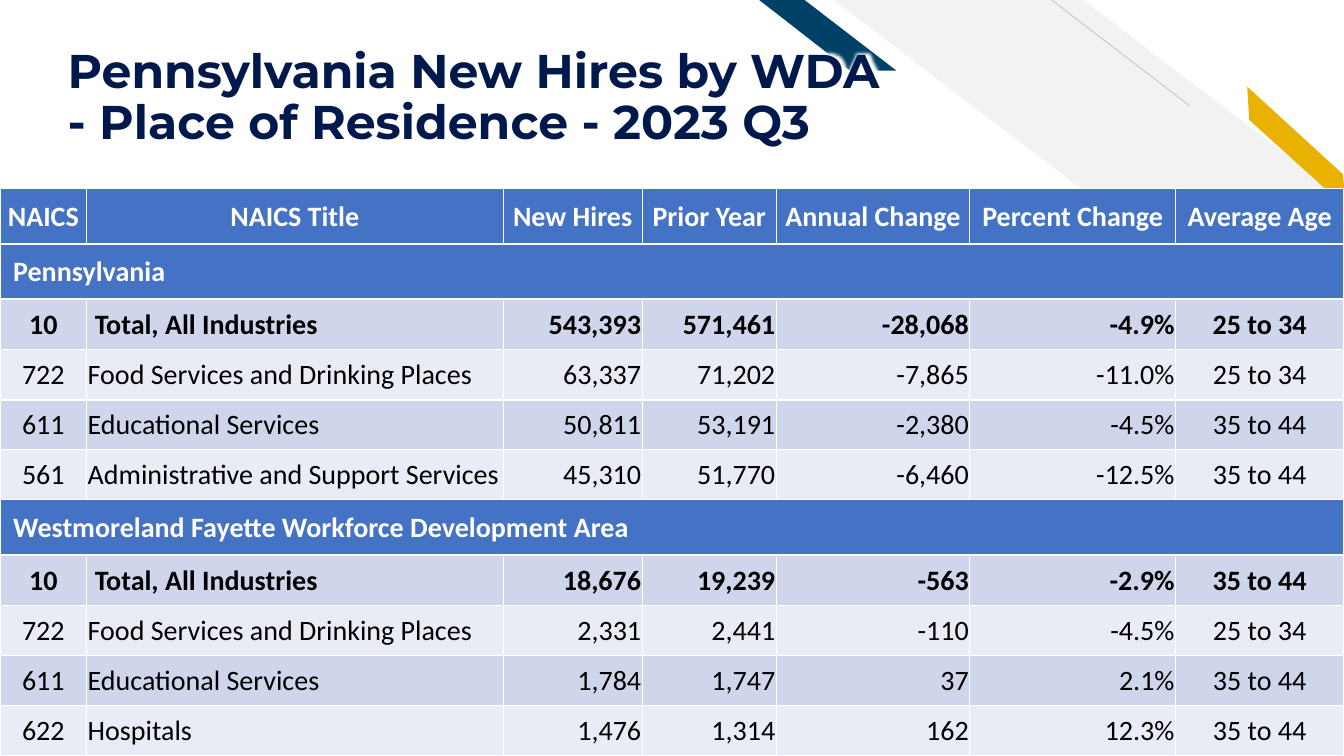
import pptx
import pptx.dml.color
import pptx.enum.shapes
import pptx.enum.text
import pptx.oxml
import pptx.oxml.ns
import pptx.util
from lxml import etree

Inches = pptx.util.Inches
Pt = pptx.util.Pt
ALIGN = pptx.enum.text.PP_ALIGN
ANCHOR = pptx.enum.text.MSO_ANCHOR
qn = pptx.oxml.ns.qn

COLORS = {
    "navy": "00194C", "teal": "014067", "gold": "EAB200", "stripe": "F2F2F2",
    "hairline": "BFBFBF", "header": "4472C4", "band_dark": "CFD5EA",
    "band_light": "E9EBF5", "white": "FFFFFF", "black": "000000",
}


def rgb(name):
    return pptx.dml.color.RGBColor.from_string(COLORS[name])


def write_text(text_frame, text, font="Calibri", size=20, color="black",
               bold=False, align=ALIGN.LEFT, line_spacing=None):
    paragraph = text_frame.paragraphs[0]
    paragraph.text = text
    paragraph.alignment = align
    paragraph.line_spacing = line_spacing
    for run in paragraph.runs:
        run.font.name = font
        run.font.size = Pt(size)
        run.font.bold = bold
        run.font.color.rgb = rgb(color)


presentation = pptx.Presentation()
presentation.slide_width = Inches(13.33)
presentation.slide_height = Inches(7.5)
slide = presentation.slides.add_slide(presentation.slide_layouts[5])
shapes = slide.shapes

# Corner decoration: wide grey stripe
stripe = shapes.add_shape(pptx.enum.shapes.MSO_SHAPE.DIAGONAL_STRIPE,
                          Inches(8.27), Inches(0), Inches(5.07), Inches(3.87))
stripe.adjustments[0] = 0.512
stripe.element.spPr.get_or_add_xfrm().set("flipH", "1")
stripe.shadow.inherit = False
stripe.fill.solid()
stripe.fill.fore_color.rgb = rgb("stripe")
stripe.line.fill.background()

# Corner decoration: hairline
hairline = shapes.add_connector(pptx.enum.shapes.MSO_CONNECTOR.STRAIGHT,
                                Inches(11.8), Inches(1.05), Inches(10.43), Inches(0))
hairline.line.color.rgb = rgb("hairline")
hairline.line.width = Pt(0.5)
etree.SubElement(hairline.element.spPr, qn("a:effectLst"))

# Corner decoration: gold and teal bars
bars = [
    ("gold", [(13.35, 2.06), (13.32, 1.73), (12.37, 0.86), (12.39, 1.19)]),
    ("teal", [(8.89, 0.7), (7.98, 0), (7.53, 0), (8.43, 0.7)]),
]
for color, corners in bars:
    points = [(Inches(x), Inches(y)) for x, y in corners]
    builder = shapes.build_freeform(*points[0])
    builder.add_line_segments(points[1:], close=True)
    bar = builder.convert_to_shape()
    bar.shadow.inherit = False
    bar.fill.solid()
    bar.fill.fore_color.rgb = rgb(color)
    bar.line.fill.background()

# Title, in front of the decoration, with a white glow
title = shapes.title
title.left, title.top = Inches(0.57), Inches(0.23)
title.width, title.height = Inches(11.26), Inches(1.26)
title_frame = title.text_frame
title_frame.auto_size = pptx.enum.text.MSO_AUTO_SIZE.NONE
title_frame.word_wrap = True
title_frame.vertical_anchor = ANCHOR.BOTTOM
title_frame.margin_left = title_frame.margin_right = Inches(0.1)
title_frame.margin_top, title_frame.margin_bottom = Inches(0.05), Inches(0)
write_text(title_frame, "Pennsylvania New Hires by WDA\v- Place of Residence - 2023 Q3",
           font="Montserrat", size=33.8, color="navy", bold=True, line_spacing=0.9)
for run in title_frame.paragraphs[0].runs:
    effects = etree.Element(qn("a:effectLst"))
    glow = etree.SubElement(effects, qn("a:glow"), rad=str(Pt(10)))
    etree.SubElement(glow, qn("a:srgbClr"), val=COLORS["white"])
    run.font.color.rgb = rgb("navy")
    run.font._element.find(qn("a:solidFill")).addnext(effects)
title.element.getparent().append(title.element)

# Table contents: a row with one entry is a section heading
rows = [
    ["NAICS", "NAICS Title", "New Hires", "Prior Year", "Annual Change",
     "Percent Change", "Average Age"],
    ["Pennsylvania"],
    ["10", "Total, All Industries", "543,393", "571,461", "-28,068", "-4.9%", "25 to 34"],
    ["722", "Food Services and Drinking Places", "63,337", "71,202", "-7,865", "-11.0%",
     "25 to 34"],
    ["611", "Educational Services", "50,811", "53,191", "-2,380", "-4.5%", "35 to 44"],
    ["561", "Administrative and Support Services", "45,310", "51,770", "-6,460", "-12.5%",
     "35 to 44"],
    ["Westmoreland Fayette Workforce Development Area"],
    ["10", "Total, All Industries", "18,676", "19,239", "-563", "-2.9%", "35 to 44"],
    ["722", "Food Services and Drinking Places", "2,331", "2,441", "-110", "-4.5%",
     "25 to 34"],
    ["611", "Educational Services", "1,784", "1,747", "37", "2.1%", "35 to 44"],
    ["622", "Hospitals", "1,476", "1,314", "162", "12.3%", "35 to 44"],
]
column_widths = [0.86, 4.13, 1.38, 1.33, 1.92, 2.04, 1.67]
column_aligns = [ALIGN.CENTER, ALIGN.LEFT] + [ALIGN.RIGHT] * 4 + [ALIGN.CENTER]
table_height = 5.63
heading_height = 0.55
body_height = (table_height - 3 * heading_height) / 8

table = shapes.add_table(len(rows), len(column_widths), Inches(0), Inches(1.87),
                         Inches(13.33), Inches(table_height)).table
for column, width in zip(table.columns, column_widths):
    column.width = Inches(width)

# Table formatting, row by row
border_above = 1.5
for row_index, entries in enumerate(rows):
    is_section = len(entries) == 1
    is_heading = row_index == 0 or is_section
    is_total = entries[0] == "10"
    border_below = 1.5 if is_section or entries[0] == "722" else 1
    borders = {"a:lnL": 1, "a:lnR": 1, "a:lnT": border_above, "a:lnB": border_below}
    border_above = border_below
    if is_heading:
        fill = "header"
    else:
        fill = "band_dark" if entries[0] in ("10", "611") else "band_light"
    table.rows[row_index].height = Inches(heading_height if is_heading else body_height)
    if is_section:
        table.cell(row_index, 0).merge(table.cell(row_index, len(column_widths) - 1))

    for column_index, align in enumerate(column_aligns):
        cell = table.cell(row_index, column_index)
        properties = cell._tc.get_or_add_tcPr()
        for side, width in borders.items():
            line = etree.SubElement(properties, qn(side), w=str(Pt(width)))
            line_fill = etree.SubElement(line, qn("a:solidFill"))
            etree.SubElement(line_fill, qn("a:srgbClr"), val=COLORS["white"])
        cell.fill.solid()
        cell.fill.fore_color.rgb = rgb(fill)
        if cell.is_spanned:
            continue
        cell.vertical_anchor = ANCHOR.MIDDLE
        cell.margin_left = cell.margin_right = cell.margin_top = Inches(0.01)
        cell.margin_bottom = Inches(0)
        if is_section:
            cell.margin_left = Inches(0.13)
            align = ALIGN.LEFT
        elif is_heading:
            align = ALIGN.CENTER
        elif is_total and column_index == 1:
            cell.margin_left = Inches(0.08)
        write_text(cell.text_frame, entries[column_index], align=align,
                   color="white" if is_heading else "black",
                   bold=is_heading or is_total)

presentation.save("out.pptx")
